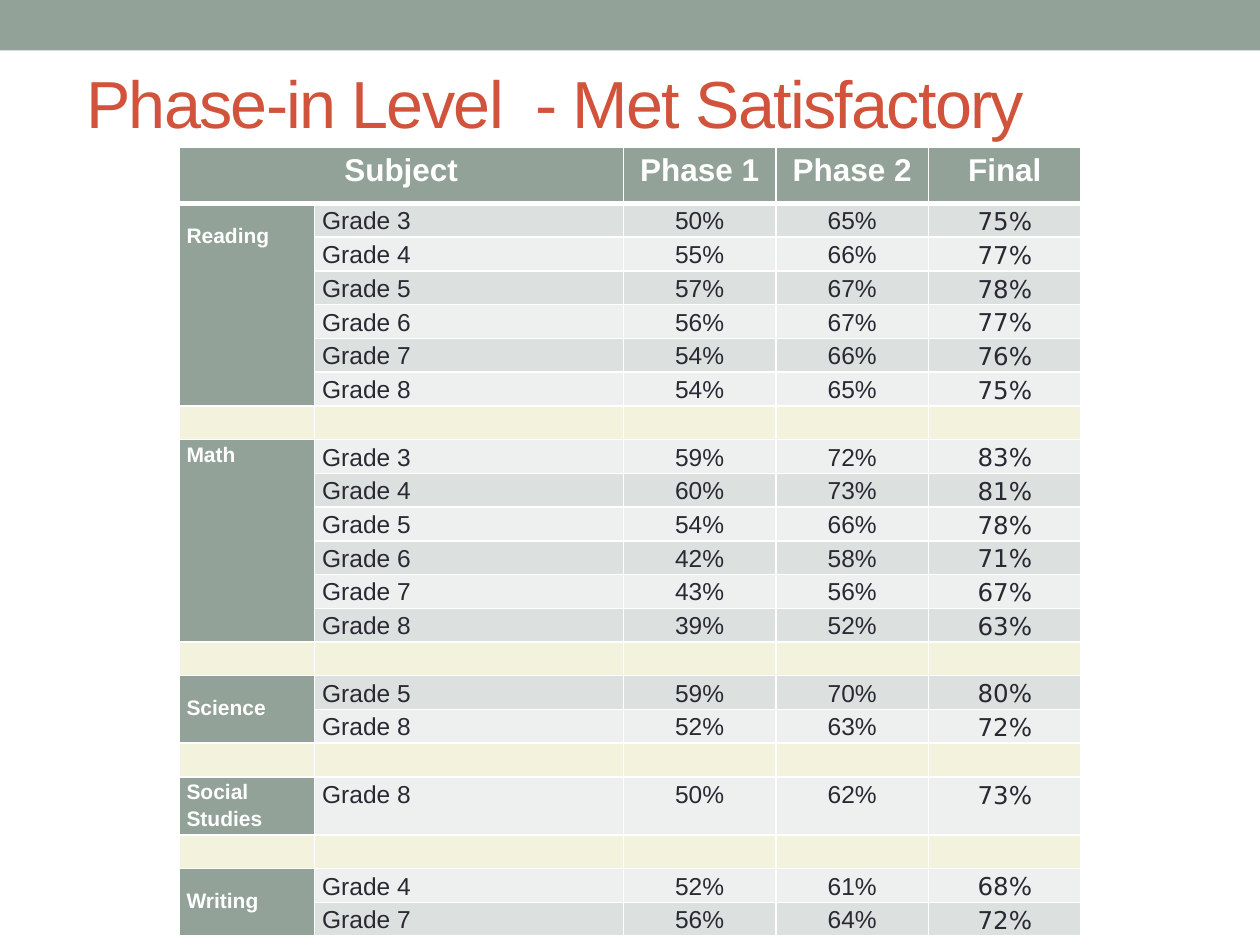
from itertools import product

from lxml.etree import SubElement
from pptx import Presentation
from pptx.dml.color import RGBColor
from pptx.enum.shapes import MSO_SHAPE as Shape
from pptx.enum.text import MSO_ANCHOR as Anchor, MSO_AUTO_SIZE as AutoSize, PP_ALIGN as Align
from pptx.oxml.ns import qn
from pptx.util import Pt

SAGE, WHITE, RUST, INK = "93A299", "FFFFFF", "D2533C", "292934"
DARK_BAND, LIGHT_BAND, CREAM = "DCE0DE", "EEF0EF", "F3F2DC"

HEADINGS = ["Subject", None, "Phase 1", "Phase 2", "Final"]
# Subject, space above its label, then grade and phase-in percentages
SUBJECTS = [
    ("Reading", 10, [(3, 50, 65, 75), (4, 55, 66, 77), (5, 57, 67, 78),
                     (6, 56, 67, 77), (7, 54, 66, 76), (8, 54, 65, 75)]),
    ("Math", 0, [(3, 59, 72, 83), (4, 60, 73, 81), (5, 54, 66, 78),
                 (6, 42, 58, 71), (7, 43, 56, 67), (8, 39, 52, 63)]),
    ("Science", 10, [(5, 59, 70, 80), (8, 52, 63, 72)]),
    ("Social Studies", 0, [(8, 50, 62, 73)]),
    ("Writing", 10, [(4, 52, 61, 68), (7, 56, 64, 72)]),
]
COLUMN_WIDTHS = [77.5, 176.4, 87.2, 87.2, 87.2]
HEADER_HEIGHT, ROW_HEIGHT, TALL_HEIGHT = 32, 19.3, 33.2


def color(value):
    return RGBColor.from_string(value)


def paint(item, value):
    item.fill.solid()
    item.fill.fore_color.rgb = color(value)


def add_span(para, text, size, value, bold=False, font="Arial"):
    span = para.add_run()
    span.text = text
    span.font.name, span.font.size, span.font.bold = font, Pt(size), bold
    span.font.color.rgb = color(value)
    return span


def add_borders(cell, bottom=1):
    """White rules, which come before the fill in the cell properties."""
    props = cell._tc.get_or_add_tcPr()
    for side in ("lnL", "lnR", "lnT", "lnB"):
        width = bottom if side == "lnB" else 1
        line = SubElement(props, qn(f"a:{side}"), w=str(int(Pt(width))))
        fill = SubElement(line, qn("a:solidFill"))
        SubElement(fill, qn("a:srgbClr"), val=WHITE)


def write_cell(cell, text, size, value, align=Align.LEFT, above=0, **style):
    cell.margin_top = Pt(above)
    para = cell.text_frame.paragraphs[0]
    para.alignment, para.line_spacing = align, 1.15
    add_span(para, text, size, value, **style)


def add_band(page, left, top, width, height):
    band = page.shapes.add_shape(Shape.RECTANGLE, Pt(left), Pt(top), Pt(width), Pt(height))
    band.shadow.inherit = False
    paint(band, SAGE)
    band.line.fill.background()


def place_title(page, left, top, width, height):
    title = page.shapes.title
    title.left, title.top, title.width, title.height = map(Pt, (left, top, width, height))
    frame = title.text_frame
    frame.auto_size, frame.vertical_anchor = AutoSize.NONE, Anchor.MIDDLE
    para = frame.paragraphs[0]
    para.alignment = Align.LEFT
    span = add_span(para, "Phase-in Level  - Met Satisfactory", 38, RUST)
    span.font._element.set("spc", "-100")


def add_score_table(page, left, top):
    row_count = sum(len(grades) + 1 for _, _, grades in SUBJECTS)
    height = HEADER_HEIGHT + ROW_HEIGHT * (row_count - 1)
    table = page.shapes.add_table(row_count, len(COLUMN_WIDTHS), Pt(left), Pt(top),
                                  Pt(sum(COLUMN_WIDTHS)), Pt(height)).table
    for column, width in zip(table.columns, COLUMN_WIDTHS):
        column.width = Pt(width)
    for index, row in enumerate(table.rows):
        row.height = Pt(ROW_HEIGHT if index else HEADER_HEIGHT)

    # Banded grid
    for row, column in product(range(row_count), range(len(COLUMN_WIDTHS))):
        cell = table.cell(row, column)
        cell.margin_left = cell.margin_right = Pt(4.3)
        cell.margin_top = cell.margin_bottom = 0
        add_borders(cell, bottom=1 if row else 3)
        paint(cell, SAGE if row == 0 else DARK_BAND if row % 2 else LIGHT_BAND)

    # Header
    table.cell(0, 0).merge(table.cell(0, 1))
    for column, heading in enumerate(HEADINGS):
        if heading:
            write_cell(table.cell(0, column), heading, 18, WHITE, Align.CENTER, bold=True)

    # Subject groups, with a cream row between them
    first = 1
    for subject, above, grades in SUBJECTS:
        if first > 1:
            add_spacer(table, first - 1)
        add_subject(table, first, subject, above, grades)
        first += len(grades) + 1


def add_spacer(table, row):
    for column in range(len(COLUMN_WIDTHS)):
        cell = table.cell(row, column)
        paint(cell, CREAM)
        SubElement(cell.text_frame.paragraphs[0]._p, qn("a:endParaRPr"), sz="900")


def add_subject(table, first, subject, above, grades):
    last = first + len(grades) - 1
    for row in range(first, last + 1):
        paint(table.cell(row, 0), SAGE)
    label = table.cell(first, 0)
    if last > first:
        label.merge(table.cell(last, 0))
    write_cell(label, subject, 12, WHITE, above=above, bold=True)
    if " " in subject:
        table.rows[first].height = Pt(TALL_HEIGHT)
    for row, (grade, *scores) in enumerate(grades, first):
        write_cell(table.cell(row, 1), f"Grade {grade}", 14, INK)
        for column, score in enumerate(scores, 2):
            font = "DejaVu Sans" if column == 4 else "Arial"
            write_cell(table.cell(row, column), f"{score}%", 14, INK, Align.CENTER, font=font)


def main():
    deck = Presentation()
    deck.slide_width, deck.slide_height = Pt(720), Pt(540)
    page = deck.slides.add_slide(deck.slide_layouts[5])
    add_band(page, 0, 0, 720, 28.8)
    place_title(page, 42, 19.5, 648, 78)
    add_score_table(page, 102.3, 84.3)
    deck.save("out.pptx")


if __name__ == "__main__":
    main()
